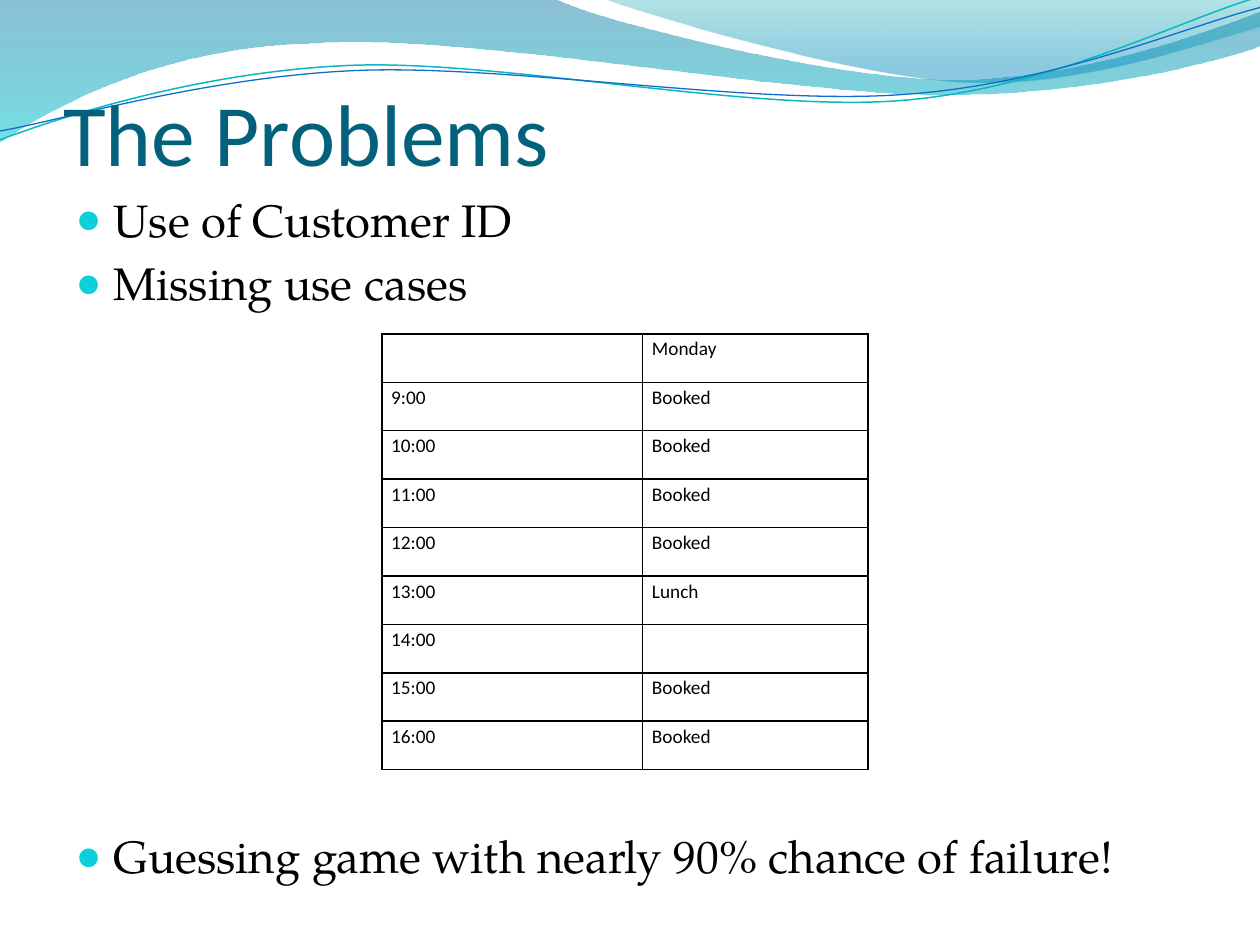
from lxml import etree
from pptx import Presentation
from pptx.dml.color import RGBColor
from pptx.enum.text import MSO_ANCHOR, MSO_AUTO_SIZE, PP_ALIGN
from pptx.oxml.ns import qn
from pptx.util import Inches, Pt

TOP, BOTTOM = MSO_ANCHOR.TOP, MSO_ANCHOR.BOTTOM
LEFT, NO_FIT = PP_ALIGN.LEFT, MSO_AUTO_SIZE.NONE

COLORS = {
    "title": "04617B", "text": "000000", "bullet": "0BD0D9",
    "deep": "0074A1", "aqua": "00C6CF", "teal": "00A1A9", "sky": "008BBF",
    "teal line": "0AB8BF", "blue line": "0F6FC6",
}
HEADING_FONT, BODY_FONT = "Calibri", "TeX Gyre Pagella"

TITLE = "The Problems"
BODY_SIZE = 26
LINE_PITCH = BODY_SIZE * 1.4
GAP = BODY_SIZE * 0.2
# Each bullet with the number of lines left free above it
BULLETS = [
    ("Use of Customer ID", 0),
    ("Missing use cases", 0),
    ("Guessing game with nearly 90% chance of failure!", 8),
]
SCHEDULE = [
    ("", "Monday"),
    ("9:00", "Booked"),
    ("10:00", "Booked"),
    ("11:00", "Booked"),
    ("12:00", "Booked"),
    ("13:00", "Lunch"),
    ("14:00", ""),
    ("15:00", "Booked"),
    ("16:00", "Booked"),
]
COLUMN_WIDTHS = (2.07, 1.79)
CELL_MARGIN = Pt(5.4)

# Steps in inches: one point is a straight step, three are a Bézier curve.
# Gradient stops are position, colour and opacity in percent.
WAVES = [
    {"steps": [[(0, 0)], [(4.4, -0.01)],
               [(4.76, 0.17), (6.64, 0.63), (7.58, 0.63)],
               [(8.53, 0.63), (9.58, 0.26), (10, 0.09)], [(10.01, 0.36)],
               [(9.83, 0.44), (8.7, 0.76), (7.46, 0.75)],
               [(6.22, 0.75), (3.82, 0.28), (2.57, 0.34)],
               [(1.29, 0.36), (0.46, 0.83), (-0.01, 1.13)], [(0, 0)]],
     "stops": [(0, "deep", 45), (1, "aqua", 55)]},
    {"steps": [[(4.79, -0.01)],
               [(5.09, 0.11), (6.82, 0.62), (7.69, 0.65)],
               [(8.56, 0.69), (9.61, 0.32), (10, 0.21)], [(10, 0)], [(4.79, -0.01)]],
     "stops": [(0, "teal", 30), (0.8, "sky", 45)]},
    {"steps": [[(0, 1.11)],
               [(0.48, 0.93), (1.58, 0.57), (2.77, 0.52)],
               [(3.95, 0.47), (5.93, 0.89), (7.13, 0.8)],
               [(8.33, 0.71), (9.38, 0.15), (9.98, -0.02)]],
     "line": ("teal line", 0.85)},
    {"steps": [[(0, 1.04)],
               [(0.47, 0.96), (1.64, 0.61), (2.83, 0.56)],
               [(4.03, 0.51), (5.97, 0.84), (7.17, 0.75)],
               [(8.36, 0.67), (9.41, 0.21), (10, 0.06)]],
     "line": ("blue line", 0.75)},
]


def rgb(name):
    return RGBColor.from_string(COLORS[name])


def apply(target, **values):
    for name, value in values.items():
        setattr(target, name, value)


def add(parent, tag, **attributes):
    return etree.SubElement(parent, qn(tag), attributes)


def place(shape, left, top, width, height):
    apply(shape, left=Inches(left), top=Inches(top),
          width=Inches(width), height=Inches(height))


def style(font, face, size, color):
    apply(font, name=face, size=Pt(size))
    font.color.rgb = rgb(color)


def bend(shape, steps):
    """Turn the straight segments that stand for curves into Bézier segments."""
    segments = list(shape._element.spPr.iter(qn("a:lnTo")))
    for segment, points in zip(segments, steps[1:]):
        if len(points) == 1:
            continue
        curve = etree.Element(qn("a:cubicBezTo"))
        for x, y in points:
            add(curve, "a:pt", x=str(Inches(x) - shape.left), y=str(Inches(y) - shape.top))
        segment.getparent().replace(segment, curve)


def add_wave(page, wave):
    start, *ends = [(Inches(x), Inches(y)) for x, y in (step[-1] for step in wave["steps"])]
    builder = page.shapes.build_freeform(*start)
    builder.add_line_segments(ends, close="stops" in wave)
    shape = builder.convert_to_shape()
    bend(shape, wave["steps"])
    shape.shadow.inherit = False
    if "line" in wave:
        color, width = wave["line"]
        shape.fill.background()
        shape.line.color.rgb = rgb(color)
        shape.line.width = Pt(width)
        return shape
    shape.line.fill.background()
    shape.fill.gradient()
    shape.fill.gradient_angle = 270
    for stop, (position, color, _) in zip(shape.fill.gradient_stops, wave["stops"]):
        stop.position = position
        stop.color.rgb = rgb(color)
    for node, (_, _, opacity) in zip(shape._element.spPr.iter(qn("a:srgbClr")), wave["stops"]):
        add(node, "a:alpha", val=str(opacity * 1000))
    return shape


def fill_title(title):
    place(title, 0.5, 0.21, 9, 1.25)
    frame = title.text_frame
    frame.text = TITLE
    apply(frame, auto_size=NO_FIT, vertical_anchor=BOTTOM, margin_left=0,
          margin_right=0, margin_top=Inches(0.05), margin_bottom=0)
    para = frame.paragraphs[0]
    para.alignment = LEFT
    style(para.runs[0].font, HEADING_FONT, 50, "title")


def fill_body(body):
    place(body, 0.5, 1.47, 9, 5.67)
    frame = body.text_frame
    frame.text = "\n".join(text for text, _ in BULLETS)
    apply(frame, auto_size=NO_FIT, vertical_anchor=TOP)
    indent = Inches(0.3)
    for para, (_, free_lines) in zip(frame.paragraphs, BULLETS):
        apply(para, alignment=LEFT, space_before=Pt(GAP + free_lines * LINE_PITCH))
        style(para.runs[0].font, BODY_FONT, BODY_SIZE, "text")
        properties = para._p.get_or_add_pPr()
        properties.set("marL", str(indent))
        properties.set("indent", str(-indent))
        add(add(properties, "a:buClr"), "a:srgbClr", val=COLORS["bullet"])
        add(properties, "a:buSzPct", val="95000")
        add(properties, "a:buChar", char="●")


def add_borders(cell):
    properties = cell._tc.get_or_add_tcPr()
    for side in ("L", "R", "T", "B"):
        line = add(properties, f"a:ln{side}", w=str(Pt(1)))
        add(add(line, "a:solidFill"), "a:srgbClr", val=COLORS["text"])


def add_schedule(page):
    frame = page.shapes.add_table(len(SCHEDULE), len(COLUMN_WIDTHS), Inches(3.03),
                                  Inches(2.65), Inches(sum(COLUMN_WIDTHS)), Inches(3.46))
    table = frame.table
    apply(table, first_row=False, horz_banding=False)
    for column, width in zip(table.columns, COLUMN_WIDTHS):
        column.width = Inches(width)
    for r, row in enumerate(SCHEDULE):
        for c, text in enumerate(row):
            cell = table.cell(r, c)
            apply(cell, vertical_anchor=TOP, margin_left=CELL_MARGIN,
                  margin_right=CELL_MARGIN, margin_top=0, margin_bottom=0)
            if text:
                cell.text = text
                para = cell.text_frame.paragraphs[0]
                para.line_spacing = 1.15
                style(para.runs[0].font, HEADING_FONT, 11, "text")
            add_borders(cell)
            cell.fill.background()


def main():
    deck = Presentation()
    apply(deck, slide_width=Inches(10), slide_height=Inches(7.5))
    page = deck.slides.add_slide(deck.slide_layouts[1])
    title, body = page.placeholders
    for depth, wave in enumerate(WAVES, start=2):
        # The waves lie behind the placeholders
        page.shapes._spTree.insert(depth, add_wave(page, wave)._element)
    fill_title(title)
    fill_body(body)
    add_schedule(page)
    deck.save("out.pptx")


if __name__ == "__main__":
    main()
